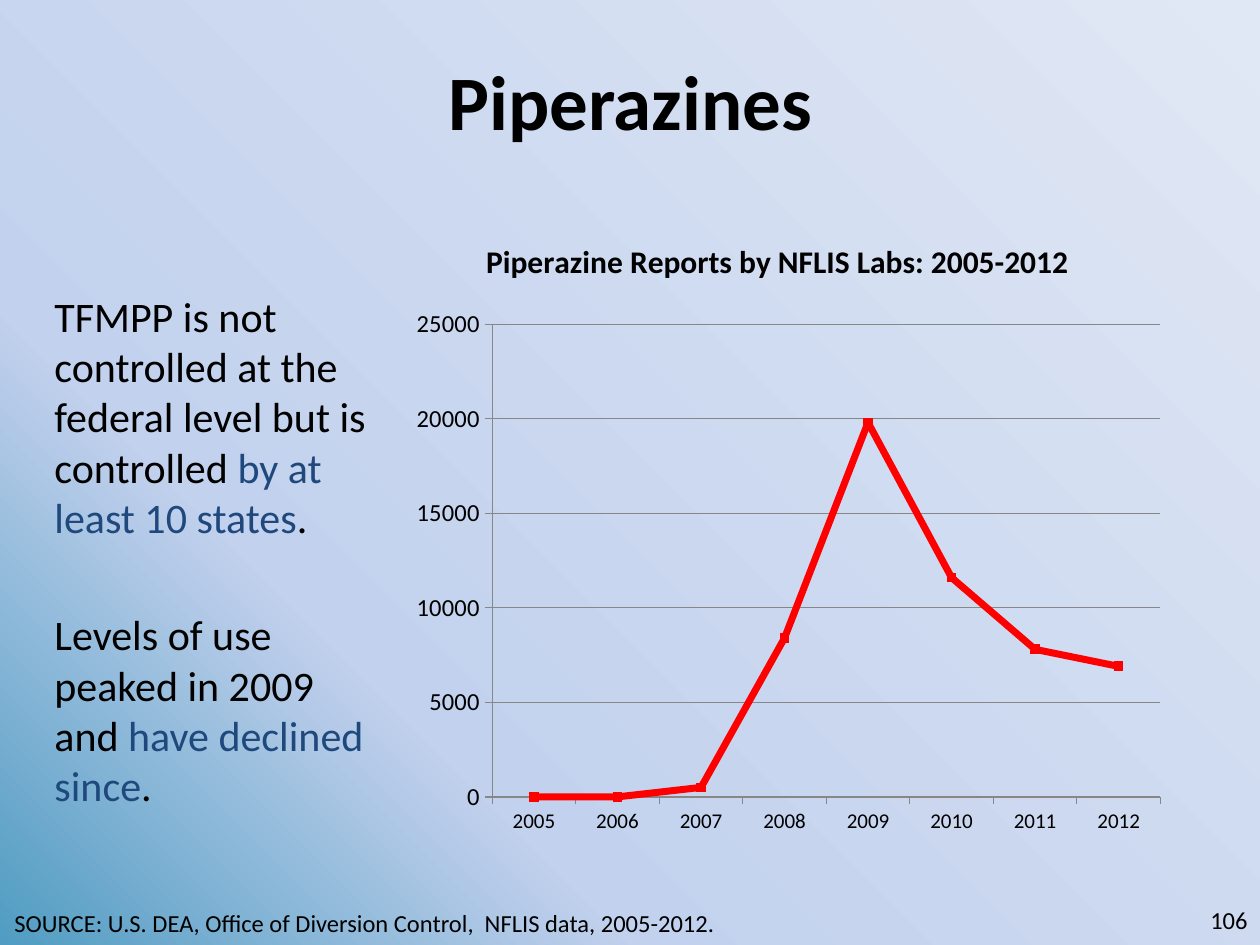
"""Build the Piperazines slide with a line chart of lab reports from 2005 to 2012."""
import lxml.etree
import pptx
import pptx.chart.data
import pptx.dml.color
import pptx.enum.chart
import pptx.enum.text
import pptx.oxml
import pptx.oxml.ns
import pptx.util

SCALE = 914400 / 126
THEME = {
    "font": "Calibri",
    "ink": "000000",
    "accent": "1F497D",
    "series": "FF0000",
    "grid": "878787",
    "background": [(0, "509CC2"), (29, "C2D1ED"), (100, "E1E8F5")],
    "title": 44,
    "body": 24,
    "chart_title": 18,
    "small": 14,
    "years": 12,
}
ALIGN = pptx.enum.text.PP_ALIGN
ANCHOR = pptx.enum.text.MSO_ANCHOR
RGB = pptx.dml.color.RGBColor.from_string


def px(*lengths):
    return [pptx.util.Emu(round(length * SCALE)) for length in lengths]


def add_text(box, paragraphs, size, align=ALIGN.LEFT, anchor=ANCHOR.TOP, bold=False, gap=0):
    frame = slide.shapes.add_textbox(*px(*box)).text_frame
    frame.word_wrap = True
    frame.vertical_anchor = anchor
    for index, pieces in enumerate(paragraphs):
        paragraph = frame.add_paragraph() if index else frame.paragraphs[0]
        paragraph.alignment = align
        paragraph.space_before = pptx.util.Pt(gap if index else 0)
        for words, color in pieces:
            run = paragraph.add_run()
            run.text = words
            run.font.name = THEME["font"]
            run.font.size = pptx.util.Pt(size)
            run.font.bold = bold
            run.font.color.rgb = RGB(THEME[color])


deck = pptx.Presentation()
deck.slide_width, deck.slide_height = px(1260, 945)
slide = deck.slides.add_slide(deck.slide_layouts[6])

stops = "".join(
    f'<a:gs pos="{position * 1000}"><a:srgbClr val="{color}"/></a:gs>'
    for position, color in THEME["background"]
)
slide.background.fill.solid()
solid = slide.background.fill._xPr.find(pptx.oxml.ns.qn("a:solidFill"))
solid.getparent().replace(solid, pptx.oxml.parse_xml(
    f'<a:gradFill {pptx.oxml.ns.nsdecls("a")} rotWithShape="1"><a:gsLst>{stops}</a:gsLst>'
    '<a:path path="circle"><a:fillToRect t="100000" r="100000"/></a:path></a:gradFill>'
))

add_text((95, 21, 1071, 158), [[("Piperazines", "ink")]], THEME["title"],
         ALIGN.CENTER, ANCHOR.MIDDLE, bold=True)
findings = [
    [("TFMPP is not controlled at the federal level but is controlled ", "ink"),
     ("by at least 10 states", "accent"), (".", "ink")],
    [("Levels of use peaked in 2009 and ", "ink"),
     ("have declined since", "accent"), (".", "ink")],
]
add_text((42, 284, 346, 494), findings, THEME["body"], gap=38)

reports = pptx.chart.data.CategoryChartData()
reports.categories = [str(year) for year in range(2005, 2013)]
reports.add_series("Series 1", (0, 0, 500, 8400, 19800, 11600, 7800, 6900))
chart = slide.shapes.add_chart(
    pptx.enum.chart.XL_CHART_TYPE.LINE_MARKERS, *px(378, 210, 788, 788), reports
).chart
chart.has_legend = False
chart.font.name = THEME["font"]
chart.font.size = pptx.util.Pt(THEME["chart_title"])
chart.font.color.rgb = RGB(THEME["ink"])

chart.has_title = True
heading = chart.chart_title.text_frame
heading.text = "Piperazine Reports by NFLIS Labs: 2005-2012"
heading_font = heading.paragraphs[0].runs[0].font
heading_font.name = THEME["font"]
heading_font.size = pptx.util.Pt(THEME["chart_title"])
heading_font.bold = True
heading_font.color.rgb = RGB(THEME["ink"])

placements = [
    (chart.chart_title._element, {"xMode": "edge", "yMode": "edge", "x": 0.13, "y": 0.03}),
    (chart._chartSpace.chart.plotArea,
     {"layoutTarget": "inner", "xMode": "edge", "yMode": "edge",
      "x": 0.145, "y": 0.145, "w": 0.848, "h": 0.6}),
]
for part, settings in placements:
    for old in part.findall(pptx.oxml.ns.qn("c:layout")):
        part.remove(old)
    layout = lxml.etree.Element(pptx.oxml.ns.qn("c:layout"))
    manual = lxml.etree.SubElement(layout, pptx.oxml.ns.qn("c:manualLayout"))
    for key, value in settings.items():
        lxml.etree.SubElement(manual, pptx.oxml.ns.qn(f"c:{key}"), val=str(value))
    caption = part.find(pptx.oxml.ns.qn("c:tx"))
    part.insert(0 if caption is None else 1, layout)

for axis, size in ((chart.category_axis, THEME["years"]), (chart.value_axis, THEME["small"])):
    axis.tick_labels.font.size = pptx.util.Pt(size)
    axis.major_tick_mark = pptx.enum.chart.XL_TICK_MARK.OUTSIDE
    axis.format.line.color.rgb = RGB(THEME["grid"])
chart.value_axis.minimum_scale = 0
chart.value_axis.maximum_scale = 25000
chart.value_axis.major_unit = 5000
chart.value_axis.major_gridlines.format.line.color.rgb = RGB(THEME["grid"])

trend = chart.plots[0].series[0]
trend.smooth = False
trend.format.line.color.rgb = RGB(THEME["series"])
trend.format.line.width = pptx.util.Pt(4)
trend.marker.style = pptx.enum.chart.XL_MARKER_STYLE.SQUARE
trend.marker.size = 5
trend.marker.format.fill.solid()
trend.marker.format.fill.fore_color.rgb = RGB(THEME["series"])
trend.marker.format.line.color.rgb = RGB(THEME["series"])

source = "SOURCE: U.S. DEA, Office of Diversion Control,  NFLIS data, 2005-2012."
add_text((2, 902, 838, 43), [[(source, "ink")]], THEME["small"])
add_text((966, 895, 294, 50), [[("106", "ink")]], THEME["small"], ALIGN.RIGHT, ANCHOR.MIDDLE)

deck.save("out.pptx")
